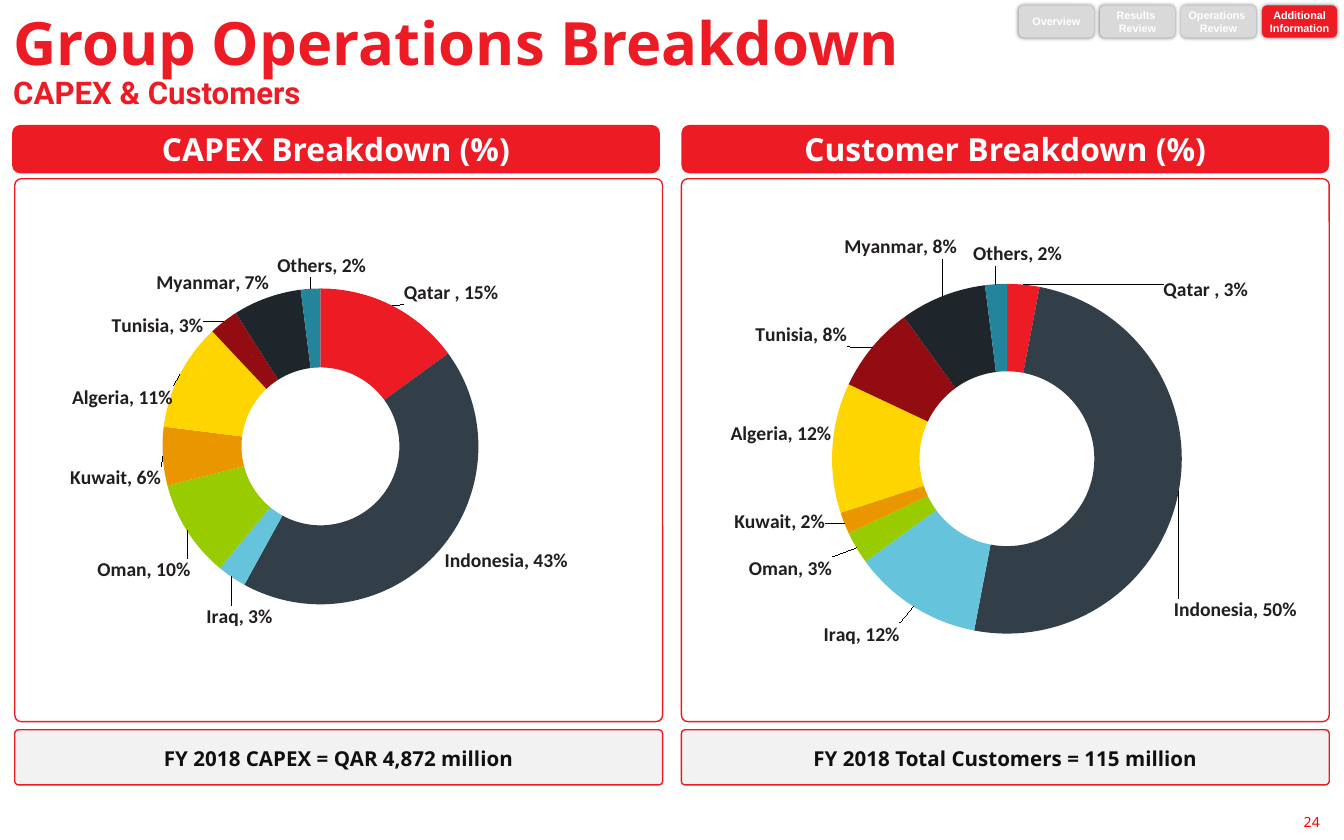
"""Build the group operations breakdown slide with its CAPEX and customer doughnuts."""
from copy import deepcopy
from itertools import accumulate
from math import cos, pi, sin

from lxml import etree
from pptx import Presentation
from pptx import util as u
from pptx.chart.data import CategoryChartData
from pptx.dml.color import RGBColor
from pptx.enum import chart as charts, shapes, text
from pptx.oxml import parse_xml
from pptx.oxml.ns import nsdecls, qn

RED = RGBColor(0xED, 0x1C, 0x24)
PAGE_RED = RGBColor(0xFF, 0x00, 0x00)
WHITE = RGBColor(0xFF, 0xFF, 0xFF)
INK = RGBColor(0x11, 0x0F, 0x10)
CHART_INK = RGBColor(0x22, 0x1E, 0x20)
PALE = RGBColor(0xF2, 0xF2, 0xF2)
INACTIVE = RGBColor(0xD9, 0xD9, 0xD9)
COUNTRY_COLOURS = {
    "Qatar ": RED,
    "Indonesia": RGBColor(0x33, 0x3F, 0x48),
    "Iraq": RGBColor(0x65, 0xC4, 0xDB),
    "Oman": RGBColor(0x99, 0xCC, 0x00),
    "Kuwait": RGBColor(0xEA, 0x96, 0x00),
    "Algeria": RGBColor(0xFF, 0xD5, 0x00),
    "Tunisia": RGBColor(0x93, 0x0C, 0x11),
    "Myanmar": RGBColor(0x1F, 0x26, 0x2B),
    "Others": RGBColor(0x24, 0x84, 0x9C),
}
SHADOW = (
    f'<a:effectLst {nsdecls("a")}><a:outerShdw blurRad="25400" dist="0">'
    '<a:srgbClr val="808080"/></a:outerShdw></a:effectLst>'
)


class SlideBuilder:
    """Hold the deck style and the slide being filled."""

    font = "Noto Sans"

    def __init__(self, slide):
        self.slide = slide

    def style(self, font, size, colour, bold=True, name=None):
        font.name = name or self.font
        font.size = u.Pt(size)
        font.color.rgb = colour
        font.bold = bold

    def textbox(self, box, words, sizes, colour, align, anchor, bold=True, inset=0.1, fonts=(None,)):
        frame = self.slide.shapes.add_textbox(*map(u.Inches, box)).text_frame
        frame.word_wrap = True
        frame.vertical_anchor = anchor
        frame.margin_left = frame.margin_right = u.Inches(inset)
        frame.margin_top = frame.margin_bottom = u.Inches(inset / 2)
        frame.text = words
        line = frame.paragraphs[0]
        line.alignment = align
        for run, size, name in zip(line.runs, sizes, fonts):
            self.style(run.font, size, colour, bold, name)
        return line

    def panel(self, box, fill, radius, outline=None):
        panel = self.slide.shapes.add_shape(
            shapes.MSO_SHAPE.ROUNDED_RECTANGLE, *map(u.Inches, box))
        panel.shadow.inherit = False
        panel.adjustments[0] = radius
        panel.fill.solid()
        panel.fill.fore_color.rgb = fill
        if outline:
            panel.line.color.rgb = outline
            panel.line.width = u.Pt(0.75)
        else:
            panel.line.fill.background()
        return panel

    def caption(self, panel, words, size, colour, name=None, inset=(0.1, 0.05)):
        frame = panel.text_frame
        frame.word_wrap = True
        frame.vertical_anchor = text.MSO_ANCHOR.MIDDLE
        frame.margin_left = frame.margin_right = u.Inches(inset[0])
        frame.margin_top = frame.margin_bottom = u.Inches(inset[1])
        frame.text = words
        for line in frame.paragraphs:
            line.alignment = text.PP_ALIGN.CENTER
            for run in line.runs:
                self.style(run.font, size, colour, name=name)
        return frame.paragraphs

    def tab(self, left, words, fill):
        tab = self.panel((left, 0.04, 0.56, 0.24), fill, 0.167)
        properties = tab.fill._xPr
        properties.replace(properties.find(qn("a:effectLst")), parse_xml(SHADOW))
        for line in self.caption(tab, words, 5.8, WHITE, "Arial", (0.04, 0.05)):
            hanging = line._p.get_or_add_pPr()
            hanging.set("marL", str(u.Inches(0.29)))
            hanging.set("indent", str(-u.Inches(0.29)))

    def layout(self, **values):
        layout = parse_xml(f'<c:layout {nsdecls("c")}><c:manualLayout/></c:layout>')
        for tag, value in values.items():
            etree.SubElement(layout[0], qn(f"c:{tag}")).set("val", str(value))
        return layout

    def doughnut(self, box, plot_box, shares, centre, radius, label_centres):
        data = CategoryChartData(number_format="0%")
        data.categories = list(COUNTRY_COLOURS)
        data.add_series("Series 1", shares)
        chart = self.slide.shapes.add_chart(
            charts.XL_CHART_TYPE.DOUGHNUT, *map(u.Inches, box), data).chart
        chart.has_title = chart.has_legend = False
        self.style(chart.font, 10, CHART_INK, False)
        area = chart._chartSpace.chart.plotArea
        for old in area.findall(qn("c:layout")):
            area.remove(old)
        x, y, w, h = plot_box
        area.insert(0, self.layout(
            layoutTarget="inner", xMode="edge", yMode="edge", x=x, y=y, w=w, h=h))
        plot = chart.plots[0]
        plot.vary_by_categories = True
        series = plot.series[0]
        for index, colour in enumerate(COUNTRY_COLOURS.values()):
            point = series.points[index].format
            point.fill.solid()
            point.fill.fore_color.rgb = colour
            point.line.fill.background()
        self.place_labels(series.data_labels, box, shares, centre, radius, label_centres)

    def place_labels(self, labels, box, shares, centre, radius, label_centres):
        labels.show_value = labels.show_category_name = True
        labels.number_format = "0%"
        labels.number_format_is_linked = False
        self.style(labels.font, 10.5, CHART_INK, name="Calibri")
        group = labels._element
        group.find(qn("c:txPr")).find(qn("a:bodyPr")).set("wrap", "none")
        separator = etree.Element(qn("c:separator"))
        separator.text = ", "
        group.find(qn("c:showBubbleSize")).addnext(separator)
        shared = [part for part in group if part.tag != qn("c:showLeaderLines")]
        for index, (share, end, target) in enumerate(
                zip(shares, accumulate(shares), label_centres)):
            angle = 2 * pi * (end - share / 2)
            ring_x = centre[0] + 0.75 * radius * sin(angle)
            ring_y = centre[1] - 0.75 * radius * cos(angle)
            label = etree.Element(qn("c:dLbl"))
            etree.SubElement(label, qn("c:idx")).set("val", str(index))
            label.append(self.layout(x=round((target[0] - ring_x) / box[2], 4),
                                     y=round((target[1] - ring_y) / box[3], 4)))
            label.extend(deepcopy(shared))
            group.insert(index, label)


def main():
    deck = Presentation()
    deck.slide_width, deck.slide_height = u.Inches(10), u.Inches(6.25)
    page = SlideBuilder(deck.slides.add_slide(deck.slide_layouts[6]))

    heading = page.textbox(
        (0, 0.11, 8.42, 0.77), "Group Operations Breakdown\vCAPEX & Customers", (32, 16.7),
        RED, text.PP_ALIGN.LEFT, text.MSO_ANCHOR.BOTTOM, fonts=(None, "Roboto"))
    heading.line_spacing = 0.9

    columns = (
        (0.11, 0.09, "CAPEX Breakdown (%)", "FY 2018 CAPEX = QAR 4,872 million"),
        (5.07, 5.07, "Customer Breakdown (%)", "FY 2018 Total Customers = 115 million"),
    )
    for left, title_left, title, total in columns:
        page.panel((left, 1.33, 4.82, 4.04), WHITE, 0.012, RED)
        page.caption(page.panel((title_left, 0.93, 4.82, 0.36), RED, 0.167), title, 17, WHITE)
        footer = page.panel((left, 5.43, 4.82, 0.41), PALE, 0.068, RED)
        page.caption(footer, total, 11, INK, inset=(0, 0))[0].line_spacing = 1.1

    page.doughnut(
        (5.42, 1.46, 4.26, 3.66), (0.181, 0.127, 0.611, 0.814),
        (0.03, 0.5, 0.12, 0.03, 0.02, 0.12, 0.08, 0.08, 0.02), (7.49, 3.42), 1.3,
        ((8.97, 2.17), (9.19, 4.55), (6.41, 4.73), (5.88, 4.24), (5.8, 3.89),
         (5.81, 3.24), (5.96, 2.5), (6.7, 1.85), (7.57, 1.9)))
    page.doughnut(
        (0.16, 1.42, 4.56, 3.69), (0.185, 0.197, 0.606, 0.637),
        (0.15, 0.43, 0.03, 0.1, 0.06, 0.11, 0.03, 0.07, 0.02), (2.39, 3.32), 1.17,
        ((3.36, 2.18), (3.77, 4.17), (1.79, 4.59), (1.08, 4.24), (0.87, 3.56),
         (0.92, 2.96), (1.18, 2.43), (1.59, 2.11), (2.4, 1.98)))

    tabs = ("Overview", "Results \nReview", "Operations \nReview", "Additional\nInformation")
    for index, words in enumerate(tabs):
        page.tab(7.58 + 0.6033 * index, words, RED if words == tabs[-1] else INACTIVE)
    page.textbox((9.17, 6.05, 0.65, 0.4), "24", (7.5,), PAGE_RED, text.PP_ALIGN.RIGHT,
                 text.MSO_ANCHOR.TOP, bold=False, inset=0)
    deck.save("out.pptx")


if __name__ == "__main__":
    main()
